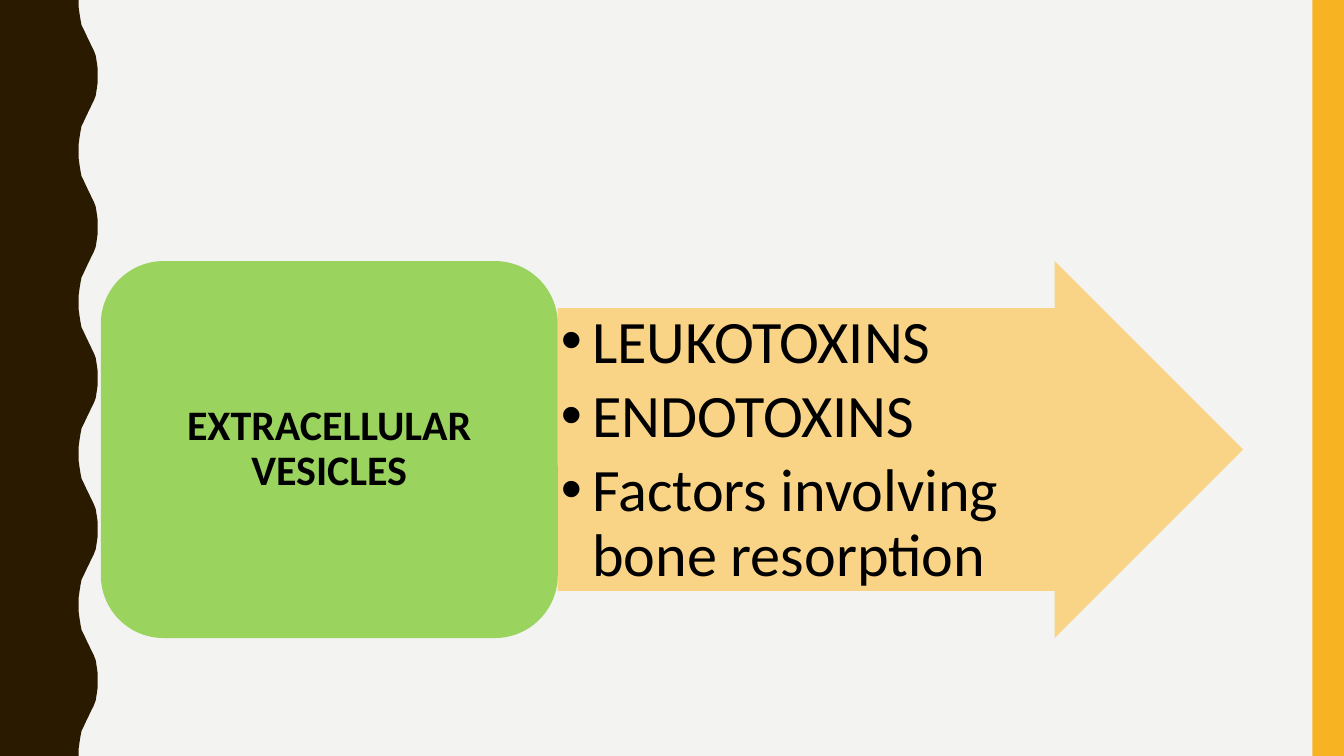
from lxml.etree import SubElement as Sub
from pptx import Presentation
from pptx.dml.color import RGBColor as RGB
from pptx.enum.shapes import MSO_SHAPE as Shape
from pptx.enum.text import MSO_ANCHOR as Anchor, PP_ALIGN as Align
from pptx.oxml.ns import qn
from pptx.util import Pt

PAPER = RGB(0xF3, 0xF3, 0xF2)
BROWN = RGB(0x2A, 0x1A, 0x00)
GOLD = RGB(0xF8, 0xB3, 0x23)
SAND = RGB(0xFB, 0xD1, 0x7B)
GREEN = RGB(0x92, 0xD0, 0x50)
BLACK = RGB(0, 0, 0)

WIDE, HIGH = 960, 540
WAVE = 108
CURVE = [(56.2, 0), (56.2, 5), (56.9, 10), (57.6, 14.4), (58.3, 18),
         (59.8, 21), (61.2, 24), (62.6, 27), (64.1, 30), (65.5, 33),
         (67, 36), (68.4, 39.6), (69.1, 44), (69.8, 49), (69.8, 54)]


class Deck:
    font = "Calibri"

    def __init__(self):
        self.file = Presentation()
        self.file.slide_width, self.file.slide_height = Pt(WIDE), Pt(HIGH)
        self.slide = self.file.slides.add_slide(self.file.slide_layouts[6])
        back = self.slide.background.fill
        back.solid()
        back.fore_color.rgb = PAPER

    def paint(self, shape, color, alpha=100):
        shape.shadow.inherit = False
        shape.line.fill.background()
        shape.fill.solid()
        shape.fill.fore_color.rgb = color
        if alpha < 100:
            tint = shape._element.spPr.find(".//" + qn("a:srgbClr"))
            Sub(tint, qn("a:alpha"), val=str(alpha * 1000))
        return shape

    def block(self, kind, left, top, width, height, color, alpha=100):
        shape = self.slide.shapes.add_shape(
            kind, Pt(left), Pt(top), Pt(width), Pt(height))
        return self.paint(shape, color, alpha)

    def wave(self, color):
        cycle = CURVE + [(x, WAVE - y) for x, y in CURVE[-2:0:-1]]
        edge = [(x, y + turn * WAVE)
                for turn in range(HIGH // WAVE) for x, y in cycle]
        edge += [(CURVE[0][0], HIGH), (0, HIGH)]
        form = self.slide.shapes.build_freeform(0, 0)
        form.add_line_segments([(Pt(x), Pt(y)) for x, y in edge], close=True)
        return self.paint(form.convert_to_shape(), color)

    def frame(self, shape, anchor, side, end):
        text = shape.text_frame
        text.word_wrap = True
        text.vertical_anchor = anchor
        text.margin_left = text.margin_right = Pt(side)
        text.margin_top = text.margin_bottom = Pt(end)
        return text

    def phrase(self, para, words, size, align, bold=False):
        para.alignment = align
        para.line_spacing = 0.9
        run = para.add_run()
        run.text = words
        run.font.name, run.font.size, run.font.bold = self.font, Pt(size), bold
        run.font.color.rgb = BLACK

    def label(self, shape, words, size):
        text = self.frame(shape, Anchor.MIDDLE, 8.6, 4.3)
        self.phrase(text.paragraphs[0], words, size, Align.CENTER, True)

    def points(self, shape, items, size):
        text = self.frame(shape, Anchor.TOP, 2.2, 2.2)
        for spot, words in enumerate(items):
            para = text.add_paragraph() if spot else text.paragraphs[0]
            self.phrase(para, words, size, Align.LEFT)
            para.level = 1
            para.space_after = Pt(6.5)
            props = para._p.get_or_add_pPr()
            props.set("marL", str(Pt(22.5)))
            props.set("indent", str(Pt(-22.5)))
            Sub(props, qn("a:buFont"), typeface="Arial")
            Sub(props, qn("a:buChar"), char="•")


def main():
    deck = Deck()
    deck.wave(BROWN)
    deck.block(Shape.RECTANGLE, 937.5, 0, 22.5, HIGH, GOLD)
    arrow = deck.block(Shape.RIGHT_ARROW, 398.4, 186.5, 489.6, 269.3, SAND, 90)
    arrow.adjustments[0] = 0.75
    deck.points(arrow, ["LEUKOTOXINS", "ENDOTOXINS",
                        "Factors involving bone resorption"], 43)
    card = deck.block(Shape.ROUNDED_RECTANGLE, 72, 186.5, 326.4, 269.3, GREEN, 90)
    deck.label(card, "EXTRACELLULAR VESICLES", 30)
    deck.file.save("out.pptx")


if __name__ == "__main__":
    main()
